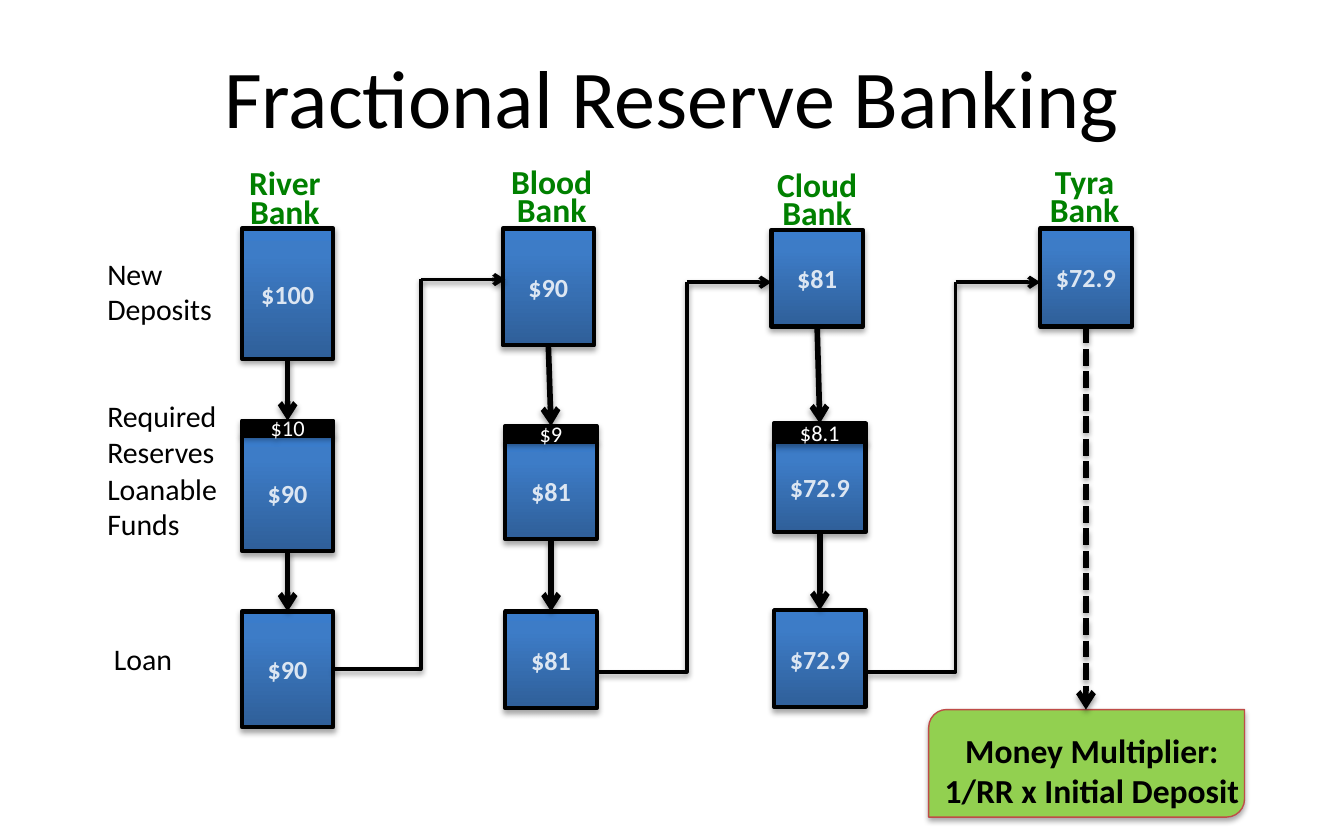
from lxml import etree
from pptx import Presentation
from pptx.dml.color import RGBColor
from pptx.enum.dml import MSO_LINE
from pptx.enum.shapes import MSO_CONNECTOR, MSO_SHAPE
from pptx.enum.text import MSO_ANCHOR, MSO_AUTO_SIZE, PP_ALIGN
from pptx.oxml import parse_xml
from pptx.oxml.ns import nsdecls, qn
from pptx.util import Inches, Pt

RECT, DIAG_RECT = MSO_SHAPE.RECTANGLE, MSO_SHAPE.ROUND_2_DIAG_RECTANGLE
STRAIGHT, ELBOW = MSO_CONNECTOR.STRAIGHT, MSO_CONNECTOR.ELBOW
CENTER, LEFT = PP_ALIGN.CENTER, PP_ALIGN.LEFT
MIDDLE, TOP = MSO_ANCHOR.MIDDLE, MSO_ANCHOR.TOP
FIT, NO_FIT = MSO_AUTO_SIZE.SHAPE_TO_FIT_TEXT, MSO_AUTO_SIZE.NONE
DASH = MSO_LINE.SQUARE_DOT

BLACK = RGBColor(0x00, 0x00, 0x00)
WHITE = RGBColor(0xFF, 0xFF, 0xFF)
PALE_BLUE = RGBColor(0xDC, 0xE6, 0xF2)
BANK_GREEN = RGBColor(0x00, 0x80, 0x00)
LIME = RGBColor(0x92, 0xD0, 0x50)
RED = RGBColor(0xBF, 0x4C, 0x48)
BLUES = [(0, RGBColor(0x2F, 0x5F, 0x99)), (80, RGBColor(0x3D, 0x7C, 0xC7)),
         (100, RGBColor(0x3A, 0x7C, 0xCB))]

SLIDE_W, SLIDE_H = 10, 6.25
ROW_DEPOSIT, ROW_LOAN = 1.7, 4.55
BOX_W = 0.68
BEND = 0.65  # horizontal run of a transfer line before and after its bend

# name, label box, deposit box, reserve bar, loanable box, loan box;
# each box is left, top, height and amount
BANKS = [
    ("River", (1.75, 1.24, 0.74), (1.8, ROW_DEPOSIT, 0.97, "$100"),
     (1.8, 3.13, 0.1, "$10"), (1.8, 3.24, 0.86, "$90"),
     (1.8, ROW_LOAN, 0.86, "$90")),
    ("Blood", (3.7, 1.23, 0.81), (3.74, ROW_DEPOSIT, 0.87, "$90"),
     (3.76, 3.17, 0.11, "$9"), (3.76, 3.29, 0.72, "$81"),
     (3.76, ROW_LOAN, 0.72, "$81")),
    ("Cloud", (5.68, 1.25, 0.8), (5.74, 1.71, 0.72, "$81"),
     (5.76, 3.15, 0.14, "$8.1"), (5.76, 3.29, 0.67, "$72.9"),
     (5.76, 4.54, 0.72, "$72.9")),
]
LAST_BANK = ("Tyra", (7.71, 1.23, 0.72), (7.74, ROW_DEPOSIT, 0.73, "$72.9"))
# start x, start y, arrow y, arrow end x
TRANSFERS = [(2.48, 4.98, 2.08, 3.76), (4.46, 5, 2.1, 5.74),
             (6.46, 5, 2.1, 7.74)]
ROW_LABELS = [((0.7, 1.85, 0.99, 0.64), "New\nDeposits"),
              ((0.7, 2.91, 1.08, 0.64), "Required\nReserves"),
              ((0.7, 3.45, 1.03, 0.64), "Loanable\nFunds"),
              ((0.75, 4.72, 0.64, 0.37), "Loan")]


def inches(values):
    return [Inches(v) for v in values]


def add_shadow(shape, alpha, distance):
    shape._element.spPr.append(parse_xml(
        f'<a:effectLst {nsdecls("a")}><a:outerShdw blurRad="{Pt(3.1)}" '
        f'dist="{Pt(distance)}" dir="5400000" rotWithShape="0">'
        f'<a:srgbClr val="{BLACK}"><a:alpha val="{alpha * 1000}"/>'
        '</a:srgbClr></a:outerShdw></a:effectLst>'))


def fill_gradient(sp):
    """Fill with the blues, running from bottom to top."""
    stops = "".join(f'<a:gs pos="{pos * 1000}"><a:srgbClr val="{color}"/></a:gs>'
                    for pos, color in BLUES)
    sp._element.spPr.find(qn("a:prstGeom")).addnext(parse_xml(
        f'<a:gradFill {nsdecls("a")} rotWithShape="1"><a:gsLst>{stops}</a:gsLst>'
        '<a:lin ang="16200000" scaled="0"/></a:gradFill>'))


def set_text(sp, text, size, color, bold=False, align=CENTER, anchor=MIDDLE,
             spacing=None):
    tf = sp.text_frame
    tf.text = text
    tf.word_wrap = False
    tf.vertical_anchor = anchor
    for p in tf.paragraphs:
        p.alignment = align
        p.line_spacing = spacing
        for r in p.runs:
            r.font.name, r.font.size, r.font.bold = "Calibri", Pt(size), bold
            r.font.color.rgb = color


def add_label(s, box, text, size, color, fit=FIT, **style):
    tb = s.shapes.add_textbox(*inches(box))
    set_text(tb, text, size, color, **style)
    tb.text_frame.auto_size = fit


def add_panel(s, kind, box, fill, line, width):
    """Add a shadowed shape; without a fill colour it gets the blue gradient."""
    sp = s.shapes.add_shape(kind, *inches(box))
    if fill is None:
        fill_gradient(sp)
    else:
        sp.fill.solid()
        sp.fill.fore_color.rgb = fill
    sp.line.color.rgb = line
    sp.line.width = Pt(width)
    add_shadow(sp, 35, 1.8)
    return sp


def add_amount(s, cell, reserve=False):
    left, top, height, amount = cell
    sp = add_panel(s, RECT, (left, top, BOX_W, height),
                   BLACK if reserve else None, BLACK, 2.25)
    if reserve:
        set_text(sp, amount, 12, WHITE)
    else:
        set_text(sp, amount, 14, PALE_BLUE, bold=True)
    return sp


def add_line(s, start, end, width, kind=STRAIGHT, arrow=True, dash=None):
    line = s.shapes.add_connector(kind, *inches(start + end))
    line.line.color.rgb = BLACK
    line.line.width = Pt(width)
    if dash is not None:
        line.line.dash_style = dash
    if arrow:
        etree.SubElement(line.line._get_or_add_ln(), qn("a:tailEnd"), type="arrow")
    add_shadow(line, 38, 1.6)
    return line


def join_down(s, upper, lower):
    line = add_line(s, (0, 0), (0, 0), 3)
    line.begin_connect(upper, 2)
    line.end_connect(lower, 0)


def add_bank_name(s, name, place):
    add_label(s, (*place, 0.53), f"{name}\nBank", 18, BANK_GREEN, bold=True,
              anchor=TOP, spacing=0.7)


def add_bank(s, name, place, deposit, reserve, loanable, loan):
    add_bank_name(s, name, place)
    deposit_box = add_amount(s, deposit)
    loanable_box = add_amount(s, loanable)
    reserve_bar = add_amount(s, reserve, reserve=True)
    loan_box = add_amount(s, loan)
    join_down(s, deposit_box, reserve_bar)
    join_down(s, loanable_box, loan_box)


def add_transfer(s, x, y, arrow_y, end_x):
    """Lead a loan to the next bank's deposit."""
    bend = (x + BEND, arrow_y)
    elbow = add_line(s, (x, y), bend, 2, kind=ELBOW, arrow=False)
    elbow._element.spPr.find(qn("a:prstGeom")).set("prst", "bentConnector2")
    add_line(s, bend, (end_x, arrow_y), 2)


def add_multiplier(s, box):
    left, top, width, _ = box
    add_panel(s, DIAG_RECT, box, LIME, RED, 0.75)
    add_label(s, (left + 0.01, top + 0.1, width + 0.06, 0.71),
              "Money Multiplier:\n1/RR x Initial Deposit", 18, BLACK,
              bold=True, anchor=TOP)


def add_last_bank(s, name, place, deposit, arrow_end):
    add_bank_name(s, name, place)
    box = add_amount(s, deposit)
    line = add_line(s, (arrow_end[0], 2.44), arrow_end, 3, dash=DASH)
    line.begin_connect(box, 2)


def main():
    prs = Presentation()
    prs.slide_width, prs.slide_height = Inches(SLIDE_W), Inches(SLIDE_H)
    s = prs.slides.add_slide(prs.slide_layouts[6])
    add_multiplier(s, (6.91, 5.28, 2.35, 0.8))
    add_label(s, (0.75, 0.04, 8.5, 1.34), "Fractional Reserve Banking", 44,
              BLACK, fit=NO_FIT)
    for box, text in ROW_LABELS:
        add_label(s, box, text, 16, BLACK, align=LEFT, anchor=TOP)
    for bank in BANKS:
        add_bank(s, *bank)
    add_last_bank(s, *LAST_BANK, arrow_end=(8.08, 5.28))
    for transfer in TRANSFERS:
        add_transfer(s, *transfer)
    prs.save("out.pptx")


if __name__ == "__main__":
    main()
